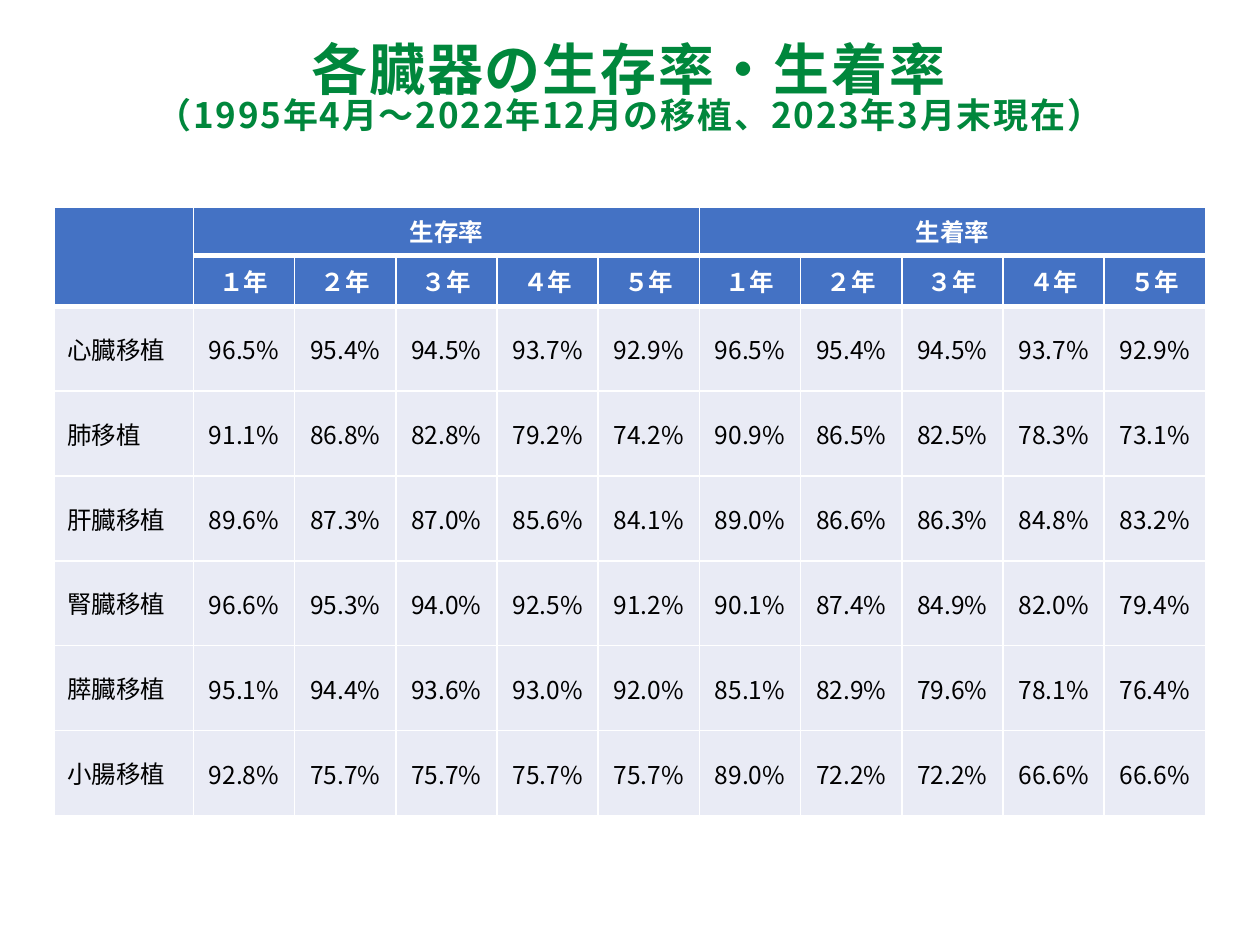
"""Build a slide tabulating survival and graft survival rates by transplanted organ."""
from lxml.etree import SubElement
from pptx import Presentation
from pptx.dml.color import RGBColor
from pptx.enum.text import MSO_ANCHOR, PP_ALIGN
from pptx.oxml.ns import qn
from pptx.util import Cm, Pt

FONT = "Noto Sans CJK JP"
WHITE, BLACK, GREEN, BLUE, PALE = "FFFFFF", "000000", "00873C", "4472C4", "E9EBF5"


def add_text(paragraph, text, size=14, color=BLACK, bold=False, align=PP_ALIGN.CENTER, spacing=0):
    paragraph.alignment = align
    run = paragraph.add_run()
    run.text = text
    run.font.size = Pt(size)
    run.font.bold = bold
    run.font.name = FONT
    run.font.color.rgb = RGBColor.from_string(color)
    properties = run.font._element
    SubElement(properties, qn("a:ea"), typeface=FONT)
    if spacing:
        properties.set("spc", str(spacing * 100))


def style_cell(cell, fill, top, bottom):
    properties = cell._tc.get_or_add_tcPr()
    for side, width in (("L", 1), ("R", 1), ("T", top), ("B", bottom)):
        line = SubElement(properties, qn(f"a:ln{side}"), w=str(Pt(width)))
        SubElement(SubElement(line, qn("a:solidFill")), qn("a:srgbClr"), val=WHITE)
    cell.fill.solid()
    cell.fill.fore_color.rgb = RGBColor.from_string(fill)
    cell.vertical_anchor = MSO_ANCHOR.MIDDLE


rates = {
    "心臓移植": [96.5, 95.4, 94.5, 93.7, 92.9, 96.5, 95.4, 94.5, 93.7, 92.9],
    "肺移植": [91.1, 86.8, 82.8, 79.2, 74.2, 90.9, 86.5, 82.5, 78.3, 73.1],
    "肝臓移植": [89.6, 87.3, 87.0, 85.6, 84.1, 89.0, 86.6, 86.3, 84.8, 83.2],
    "腎臓移植": [96.6, 95.3, 94.0, 92.5, 91.2, 90.1, 87.4, 84.9, 82.0, 79.4],
    "膵臓移植": [95.1, 94.4, 93.6, 93.0, 92.0, 85.1, 82.9, 79.6, 78.1, 76.4],
    "小腸移植": [92.8, 75.7, 75.7, 75.7, 75.7, 89.0, 72.2, 72.2, 66.6, 66.6],
}
years = ["１年", "２年", "３年", "４年", "５年"]
rows = [
    ["", "生存率", "", "", "", "", "生着率", "", "", "", ""],
    ["", *years, *years],
    *([organ, *(f"{rate:.1f}%" for rate in values)] for organ, values in rates.items()),
]

presentation = Presentation()
presentation.slide_width, presentation.slide_height = Cm(25.4), Cm(19.05)
slide = presentation.slides.add_slide(presentation.slide_layouts[6])

shape = slide.shapes.add_table(len(rows), 11, Cm(1.1), Cm(4.17), Cm(23.2), Cm(12))
table = shape.table
for index, column in enumerate(table.columns):
    column.width = Cm(2.04 if index else 2.8)
for index, row in enumerate(table.rows):
    row.height = Cm(0.88 if index < 2 else 1.71)

for row_index, texts in enumerate(rows):
    header = row_index < 2
    top = 3 if row_index in (1, 2) else 1
    bottom = 3 if header else 1
    for column_index, text in enumerate(texts):
        cell = table.cell(row_index, column_index)
        style_cell(cell, BLUE if header else PALE, top, bottom)
        if not header and column_index:
            cell.margin_left = cell.margin_right = cell.margin_top = Cm(0.02)
            cell.margin_bottom = Cm(0)
        if text:
            add_text(cell.text_frame.paragraphs[0], text, bold=header,
                     color=WHITE if header else BLACK,
                     align=PP_ALIGN.CENTER if header or column_index else PP_ALIGN.LEFT)

table.cell(0, 0).merge(table.cell(1, 0))
for first in (1, 6):
    table.cell(0, first).merge(table.cell(0, first + 4))

title = slide.shapes.add_textbox(Cm(2.57), Cm(0.84), Cm(20.24), Cm(2.46))
title.text_frame.word_wrap = True
paragraph = title.text_frame.paragraphs[0]
paragraph.line_spacing = 0.8
add_text(paragraph, "各臓器の生存率・生着率", size=32, color=GREEN, bold=True, spacing=1)
paragraph.add_line_break()
add_text(paragraph, "（1995年4月～2022年12月の移植、2023年3月末現在）",
         size=20, color=GREEN, bold=True, spacing=1)

presentation.save("out.pptx")
